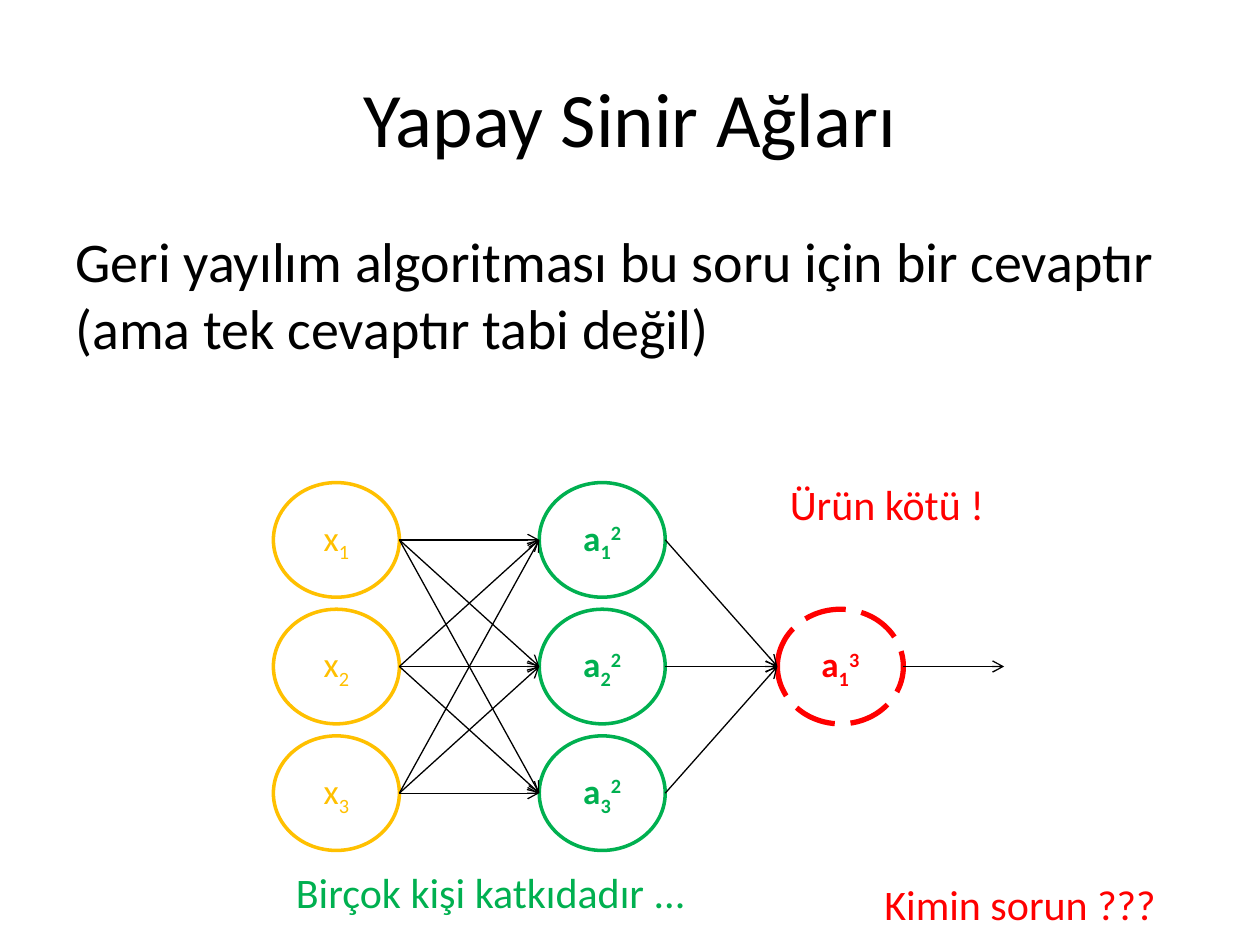
from itertools import product

from lxml.etree import SubElement
from pptx import Presentation
from pptx.dml.color import RGBColor
from pptx.enum.dml import MSO_LINE as Dash
from pptx.enum.shapes import MSO_CONNECTOR as Connector, MSO_SHAPE as Shape
from pptx.enum.text import MSO_ANCHOR as Anchor, PP_ALIGN as Align
from pptx.oxml.ns import qn
from pptx.util import Inches, Pt

BLACK, WHITE = "000000", "FFFFFF"
AMBER, GREEN, RED = "FFC000", "00B050", "FF0000"
NODE_WIDTH, NODE_HEIGHT, ROW_STEP = 1, 0.91, 1.005
SUBSCRIPT, SUPERSCRIPT = -25000, 30000


def color(value):
    return RGBColor.from_string(value)


def write(box, text, size=24, ink=BLACK, bold=False, align=Align.LEFT,
          anchor=Anchor.TOP, sub="", sup=""):
    frame = box.text_frame
    frame.word_wrap = True
    frame.vertical_anchor = anchor
    para = frame.paragraphs[0]
    para.alignment = align
    for part, baseline in ((text, 0), (sub, SUBSCRIPT), (sup, SUPERSCRIPT)):
        if not part:
            continue
        span = para.add_run()
        span.text = part
        span.font.name = "Calibri"
        span.font.size = Pt(size)
        span.font.bold = bold
        span.font.color.rgb = color(ink)
        if baseline:
            span.font._element.set("baseline", str(baseline))


def add_title(page, left, top, width, height, text):
    title = page.shapes.title
    title.left, title.top = Inches(left), Inches(top)
    title.width, title.height = Inches(width), Inches(height)
    write(title, text, size=44, align=Align.CENTER, anchor=Anchor.MIDDLE)


def add_text(page, left, top, width, height, text, **style):
    box = page.shapes.add_textbox(
        Inches(left), Inches(top), Inches(width), Inches(height))
    write(box, text, **style)


def add_neuron(page, left, top, ink, text, line_width=2, dash=None, **style):
    neuron = page.shapes.add_shape(
        Shape.OVAL, Inches(left), Inches(top),
        Inches(NODE_WIDTH), Inches(NODE_HEIGHT))
    neuron.shadow.inherit = False
    neuron.fill.solid()
    neuron.fill.fore_color.rgb = color(WHITE)
    neuron.line.color.rgb = color(ink)
    neuron.line.width = Pt(line_width)
    if dash:
        neuron.line.dash_style = dash
    write(neuron, text, size=20, ink=ink, align=Align.CENTER,
          anchor=Anchor.MIDDLE, **style)
    return neuron


def add_arrow(page, start_x, start_y, end_x, end_y):
    arrow = page.shapes.add_connector(
        Connector.STRAIGHT, start_x, start_y, end_x, end_y)
    arrow.line.color.rgb = color(BLACK)
    arrow.line.width = Pt(0.75)
    SubElement(arrow.line._get_or_add_ln(), qn("a:tailEnd"), type="arrow")
    SubElement(arrow._element.spPr, qn("a:effectLst"))


def link_layers(page, sources, targets):
    for source, target in product(sources, targets):
        add_arrow(page, source.left + source.width,
                  source.top + source.height // 2,
                  target.left, target.top + target.height // 2)


def add_network(page, left, top):
    rows = [top + ROW_STEP * row for row in range(3)]
    inputs = [add_neuron(page, left, y, AMBER, "x", sub=str(number))
              for number, y in enumerate(rows, 1)]
    hidden = [add_neuron(page, left + 2.11, y, GREEN, "a", bold=True,
                         sub=str(number), sup="2")
              for number, y in enumerate(rows, 1)]
    output = add_neuron(page, left + 4, rows[1], RED, "a", line_width=3,
                        dash=Dash.LONG_DASH, bold=True, sub="1", sup="3")
    link_layers(page, inputs, hidden)
    link_layers(page, hidden, [output])
    exit_x = output.left + output.width
    exit_y = output.top + output.height // 2
    add_arrow(page, exit_x, exit_y, exit_x + Inches(0.8), exit_y)


def main():
    deck = Presentation()
    deck.slide_width, deck.slide_height = Inches(10), Inches(7.5)
    page = deck.slides.add_slide(deck.slide_layouts[5])
    add_title(page, 0.5, 0.3, 9, 1.25, "Yapay Sinir Ağları")
    add_text(page, 0.5, 1.75, 9, 1.25,
             "Geri yayılım algoritması bu soru için bir cevaptır "
             "(ama tek cevaptır tabi değil)", size=32)
    add_network(page, 2.17, 3.83)
    add_text(page, 6.17, 3.75, 3.5, 0.5, "Ürün kötü !", ink=RED)
    add_text(page, 6.92, 6.92, 3.08, 0.5, "Kimin sorun ???", ink=RED)
    add_text(page, 2.25, 6.83, 5.08, 0.5, "Birçok kişi katkıdadır ...",
             ink=GREEN)
    deck.save("out.pptx")


if __name__ == "__main__":
    main()
